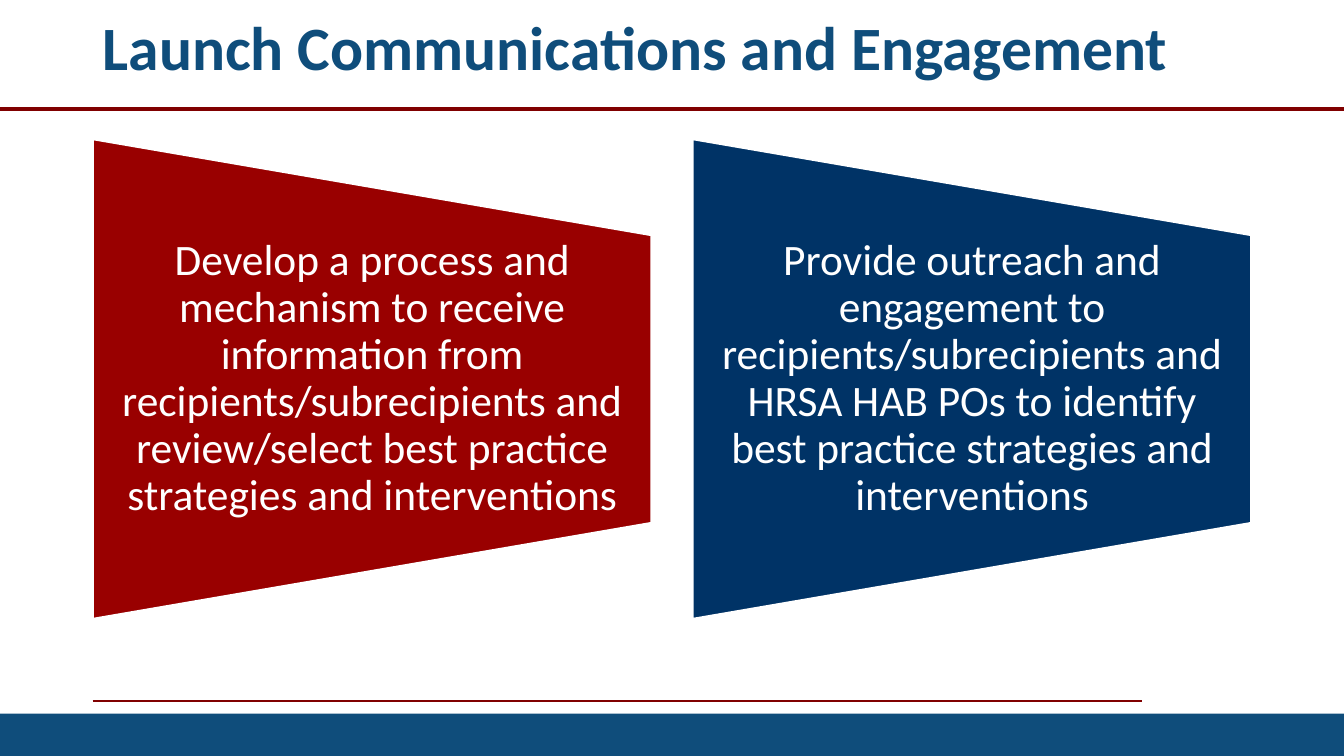
from dataclasses import dataclass

from lxml import etree
from pptx import Presentation
from pptx import util as u
from pptx.dml.color import RGBColor
from pptx.enum import shapes, text
from pptx.oxml.ns import qn

TITLE = "Launch Communications and Engagement"
PANELS = [
    ("Develop a process and mechanism to receive information from "
     "recipients/subrecipients and review/select best practice "
     "strategies and interventions", "990000"),
    ("Provide outreach and engagement to recipients/subrecipients and "
     "HRSA HAB POs to identify best practice strategies and "
     "interventions", "003366"),
]


@dataclass(frozen=True)
class Theme:
    font: str = "Calibri"
    title_size: int = 44
    body_size: int = 31
    brand: str = "0F4D7B"
    rule: str = "800000"
    white: str = "FFFFFF"


THEME = Theme()
WIDTH, HEIGHT = 13.33, 7.5
MARGIN = 0.92
FOOTER_TOP = 7.08
RULES = [
    (MARGIN, 0.85 * WIDTH, 6.95, 1.5),
    (0, WIDTH, 1.08, 3),
]
PANEL_TOP, PANEL_W, PANEL_H, PANEL_STEP = 1.38, 5.54, 4.76, 5.95
TEXT_SHARE = 0.6


def color(value):
    return RGBColor.from_string(value)


def box(left, top, width, height):
    return [u.Inches(v) for v in (left, top, width, height)]


def add_rule(slide, x1, x2, y, weight):
    line = slide.shapes.add_connector(
        shapes.MSO_CONNECTOR.STRAIGHT,
        u.Inches(x1), u.Inches(y), u.Inches(x2), u.Inches(y))
    line.line.color.rgb = color(THEME.rule)
    line.line.width = u.Pt(weight)
    etree.SubElement(line._element.spPr, qn("a:effectLst"))


def add_block(slide, kind, place, fill):
    sp = slide.shapes.add_shape(kind, *box(*place))
    sp.shadow.inherit = False
    sp.fill.solid()
    sp.fill.fore_color.rgb = color(fill)
    sp.line.fill.background()
    return sp


def add_text(slide, place, words, size, ink, bold, align, inset):
    tf = slide.shapes.add_textbox(*box(*place)).text_frame
    tf.word_wrap = True
    tf.vertical_anchor = text.MSO_ANCHOR.MIDDLE
    tf.margin_left = tf.margin_right = u.Inches(inset)
    tf.margin_top = tf.margin_bottom = 0
    p = tf.paragraphs[0]
    p.alignment = align
    p.line_spacing = 0.9
    r = p.add_run()
    r.text = words
    r.font.name = THEME.font
    r.font.size = u.Pt(size)
    r.font.bold = bold
    r.font.color.rgb = color(ink)


def add_panel(slide, column, words, fill):
    left = MARGIN + column * PANEL_STEP
    middle = PANEL_TOP + PANEL_H / 2
    sp = add_block(slide, shapes.MSO_SHAPE.FLOWCHART_MANUAL_OPERATION,
                   (left + (PANEL_W - PANEL_H) / 2, middle - PANEL_W / 2,
                    PANEL_H, PANEL_W), fill)
    sp.rotation = 270
    sp.line.color.rgb = color(THEME.white)
    sp.line.width = u.Pt(1.5)
    text_h = PANEL_H * TEXT_SHARE
    add_text(slide, (left, middle - text_h / 2, PANEL_W, text_h), words,
             THEME.body_size, THEME.white, False, text.PP_ALIGN.CENTER, 0.22)


def main():
    prs = Presentation()
    prs.slide_width, prs.slide_height = u.Inches(WIDTH), u.Inches(HEIGHT)
    s = prs.slides.add_slide(prs.slide_layouts[6])
    for rule in RULES:
        add_rule(s, *rule)
    add_block(s, shapes.MSO_SHAPE.RECTANGLE,
              (0, FOOTER_TOP, WIDTH, HEIGHT - FOOTER_TOP), THEME.brand)
    add_text(s, (MARGIN, -0.22, 11.5, 1.45), TITLE, THEME.title_size,
             THEME.brand, True, text.PP_ALIGN.LEFT, 0.1)
    for column, (words, fill) in enumerate(PANELS):
        add_panel(s, column, words, fill)
    prs.save("out.pptx")


if __name__ == "__main__":
    main()
